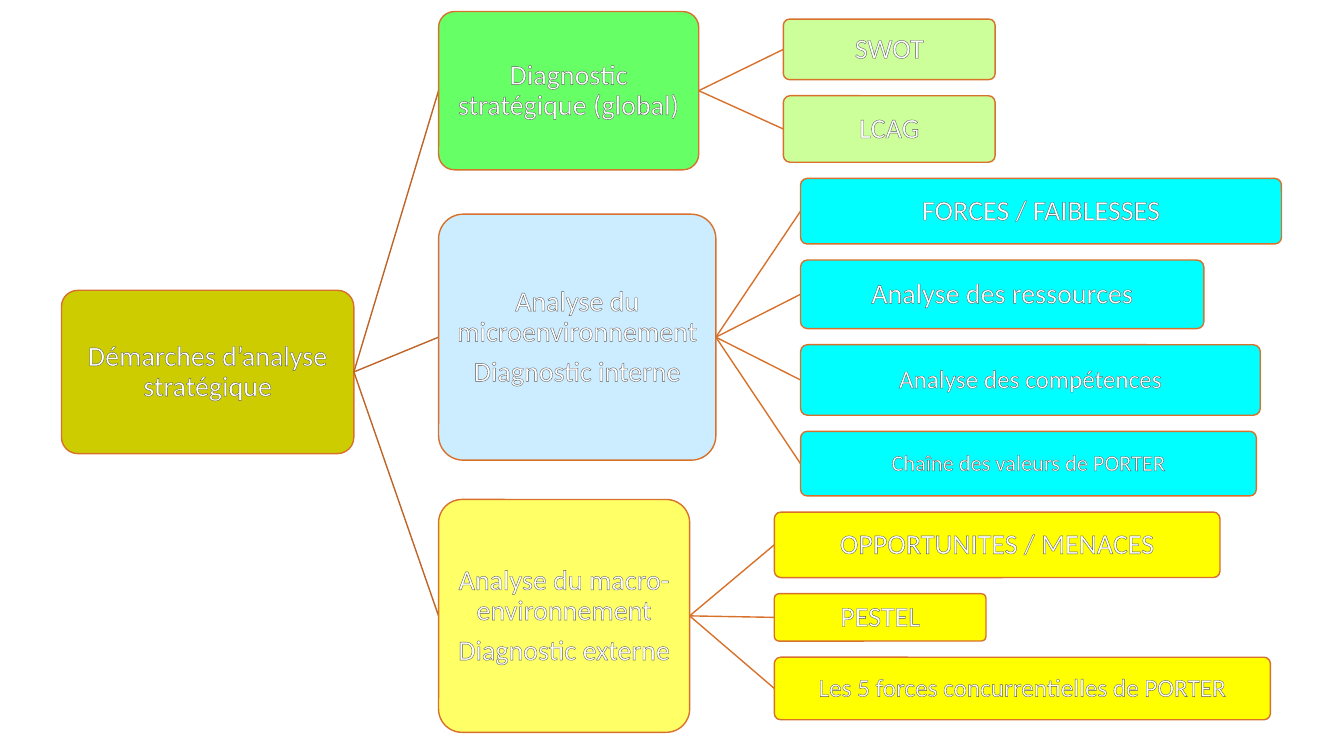
from lxml import etree
from pptx import Presentation
from pptx.dml.color import RGBColor
from pptx.enum import shapes, text
from pptx.oxml.ns import qn
from pptx.util import Inches, Pt

COLORS = {
    "root": "CCCC00", "global": "66FF66", "global_leaf": "CCFF99",
    "micro": "CCECFF", "micro_leaf": "00FFFF",
    "macro": "FFFF66", "macro_leaf": "FFFF00",
    "line": "D7712C", "trunk": "BE6427", "text": "FFFFFF", "outline": "595959",
}
LEVEL_GAP = 0.84
LEAF_GAP = 0.16
ROOT_X, ROOT_W, ROOT_H = 0.61, 2.9, 1.62
BRANCHES = [
    ("global", ["Diagnostic stratégique (global)"], 2.58, 1.57, [
        ("SWOT", 2.1, 0.6, 20),
        ("LCAG", 2.1, 0.66, 20),
    ]),
    ("micro", ["Analyse du microenvironnement", "Diagnostic interne"], 2.75, 2.44, [
        ("FORCES / FAIBLESSES", 4.77, 0.65, 20),
        ("Analyse des ressources", 4, 0.68, 20),
        ("Analyse des compétences", 4.56, 0.7, 18),
        ("Chaîne des valeurs de PORTER", 4.52, 0.64, 16),
    ]),
    ("macro", ["Analyse du macro-environnement", "Diagnostic externe"], 2.49, 2.31, [
        ("OPPORTUNITES / MENACES", 4.42, 0.65, 20),
        ("PESTEL", 2.1, 0.47, 20),
        ("Les 5 forces concurrentielles de PORTER", 4.92, 0.62, 18),
    ]),
]

prs = Presentation()
prs.slide_width, prs.slide_height = Inches(13.33), Inches(7.5)
s = prs.slides.add_slide(prs.slide_layouts[6])


def add_box(lines, *, x, mid, w, h, fill, size=20):
    sp = s.shapes.add_shape(shapes.MSO_SHAPE.ROUNDED_RECTANGLE,
                            Inches(x), Inches(mid - h / 2), Inches(w), Inches(h))
    sp.adjustments[0] = 0.1
    sp.shadow.inherit = False
    sp.fill.solid()
    sp.fill.fore_color.rgb = RGBColor.from_string(COLORS[fill])
    sp.line.color.rgb = RGBColor.from_string(COLORS["line"])
    sp.line.width = Pt(1)
    tf = sp.text_frame
    tf.word_wrap = True
    tf.vertical_anchor = text.MSO_ANCHOR.MIDDLE
    tf.margin_left = tf.margin_right = tf.margin_top = tf.margin_bottom = Inches(0.01)
    for i, line in enumerate(lines):
        p = tf.add_paragraph() if i else tf.paragraphs[0]
        p.alignment = text.PP_ALIGN.CENTER
        p.line_spacing = 0.9
        p.space_after = Pt(size * 0.35)
        r = p.add_run()
        r.text = line
        r.font.name = "Calibri"
        r.font.size = Pt(size)
        r.font.color.rgb = RGBColor.from_string(COLORS["text"])
        ln = etree.Element(qn("a:ln"), w=str(Pt(0.75)))
        solid = etree.SubElement(ln, qn("a:solidFill"))
        etree.SubElement(solid, qn("a:srgbClr"), val=COLORS["outline"])
        r.font._element.insert(0, ln)


def add_link(x, y, end_y, color):
    link = s.shapes.add_connector(shapes.MSO_CONNECTOR.STRAIGHT, Inches(x), Inches(y),
                                  Inches(x + LEVEL_GAP), Inches(end_y))
    link.line.color.rgb = RGBColor.from_string(COLORS[color])
    link.line.width = Pt(1)
    etree.SubElement(link._element.spPr, qn("a:effectLst"))


root_mid = 3.69
root_right = ROOT_X + ROOT_W
branch_x = root_right + LEVEL_GAP
add_box(["Démarches d’analyse stratégique"], x=ROOT_X, mid=root_mid,
        w=ROOT_W, h=ROOT_H, fill="root")

top = 0.19
for name, lines, w, h, leaves in BRANCHES:
    span = sum(leaf[2] for leaf in leaves) + LEAF_GAP * (len(leaves) - 1)
    mid = top + span / 2
    right = branch_x + w
    add_link(root_right, root_mid, mid, "trunk")
    add_box(lines, x=branch_x, mid=mid, w=w, h=h, fill=name)
    for label, leaf_w, leaf_h, size in leaves:
        leaf_mid = top + leaf_h / 2
        add_link(right, mid, leaf_mid, "line")
        add_box([label], x=right + LEVEL_GAP, mid=leaf_mid, w=leaf_w, h=leaf_h,
                fill=f"{name}_leaf", size=size)
        top += leaf_h + LEAF_GAP

prs.save("out.pptx")
